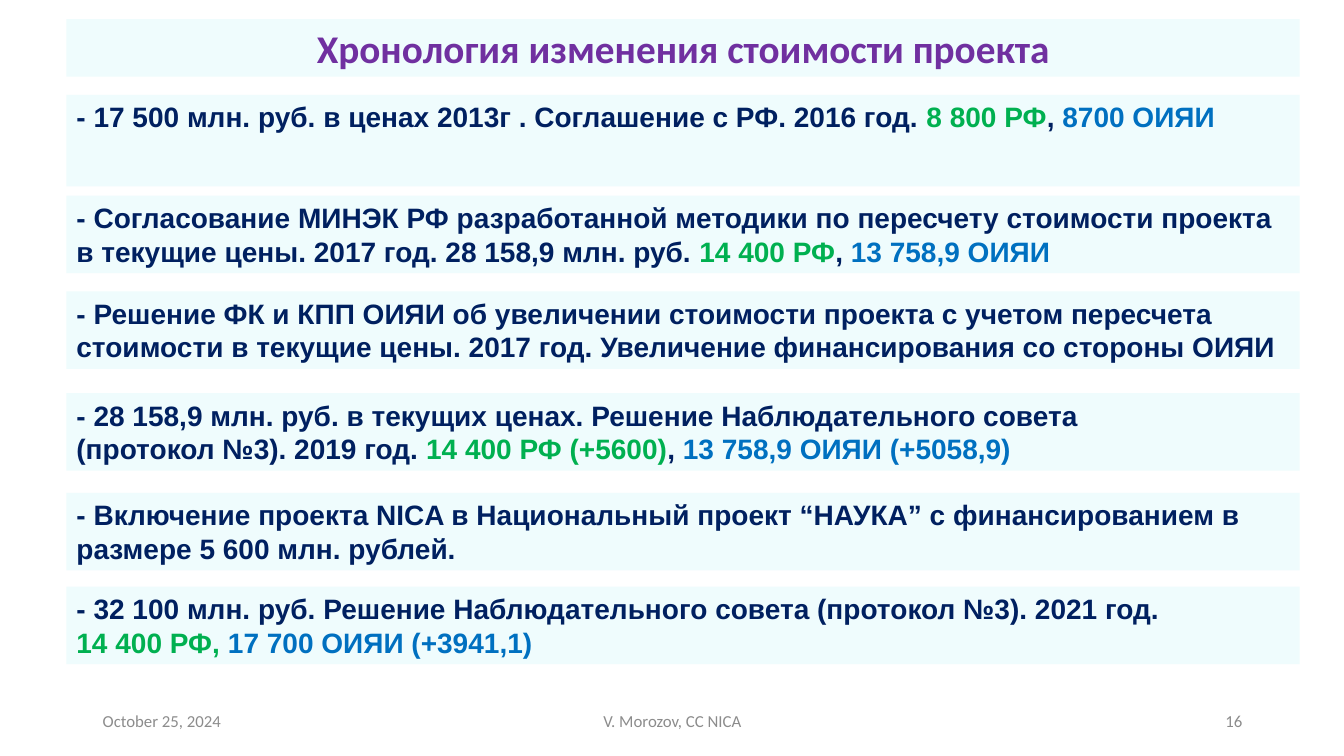
import pptx
import pptx.util
import pptx.dml.color
import pptx.enum.shapes
import pptx.enum.text

Inches = pptx.util.Inches
ALIGN = pptx.enum.text.PP_ALIGN
ANCHOR = pptx.enum.text.MSO_ANCHOR

COLORS = {
    "panel": "EFFCFD",
    "title": "7030A0",
    "text": "002060",
    "russia": "00B050",
    "institute": "0070C0",
    "footer": "8C8C8C",
}

LEFT, WIDTH = 0.66, 12.23

# Top, height and coloured parts of each step
STEPS = [
    (0.94, 0.91, [
        ("- 17 500 млн. руб. в ценах 2013г . Соглашение с РФ. 2016 год. ", "text"),
        ("8 800 РФ", "russia"), (", ", "text"), ("8700 ОИЯИ", "institute")]),
    (1.94, 0.77, [
        ("- Согласование МИНЭК РФ разработанной методики по пересчету стоимости "
         "проекта в текущие цены. 2017 год. 28 158,9 млн. руб. ", "text"),
        ("14 400 РФ", "russia"), (", ", "text"), ("13 758,9 ОИЯИ", "institute")]),
    (2.89, 0.77, [
        ("- Решение ФК и КПП ОИЯИ об увеличении стоимости проекта с учетом "
         "пересчета стоимости в текущие цены. 2017 год. Увеличение "
         "финансирования со стороны ОИЯИ", "text")]),
    (3.9, 0.77, [
        ("- 28 158,9 млн. руб. в текущих ценах. Решение Наблюдательного совета\n"
         "(протокол №3). 2019 год. ", "text"),
        ("14 400 РФ (+5600)", "russia"), (", ", "text"),
        ("13 758,9 ОИЯИ (+5058,9)", "institute")]),
    (4.89, 0.77, [
        ("- Включение проекта NICA в Национальный проект “НАУКА” с "
         "финансированием в размере 5 600 млн. рублей.", "text")]),
    (5.82, 0.77, [
        ("- 32 100 млн. руб. Решение Наблюдательного совета (протокол №3). "
         "2021 год.\n", "text"),
        ("14 400 РФ, ", "russia"), ("17 700 ОИЯИ (+3941,1)", "institute")]),
]


def rgb(name):
    return pptx.dml.color.RGBColor.from_string(COLORS[name])


def add_text(sp, parts, size, font, bold=False, align=ALIGN.LEFT, anchor=ANCHOR.TOP):
    """Write (text, colour) parts as one paragraph; a newline is a line break."""
    tf = sp.text_frame
    tf.word_wrap = True
    tf.vertical_anchor = anchor
    p = tf.paragraphs[0]
    p.alignment = align
    for text, color in parts:
        for i, line in enumerate(text.split("\n")):
            if i:
                p.add_line_break()
            if line:
                r = p.add_run()
                r.text = line
                r.font.size = pptx.util.Pt(size)
                r.font.name = font
                r.font.bold = bold
                r.font.color.rgb = rgb(color)


def add_panel(s, top, height, parts, **text_format):
    sp = s.shapes.add_shape(pptx.enum.shapes.MSO_SHAPE.RECTANGLE, Inches(LEFT),
                            Inches(top), Inches(WIDTH), Inches(height))
    sp.shadow.inherit = False
    sp.fill.solid()
    sp.fill.fore_color.rgb = rgb("panel")
    sp.line.fill.background()
    add_text(sp, parts, **text_format)


def add_footer(s, left, top, width, height):
    side = 3
    middle = 4.5
    fields = [
        (left, side, "October 25, 2024", ALIGN.LEFT),
        (left + (width - middle) / 2, middle, "V. Morozov, CC NICA", ALIGN.CENTER),
        (left + width - side, side, "16", ALIGN.RIGHT),
    ]
    for x, w, text, align in fields:
        sp = s.shapes.add_textbox(Inches(x), Inches(top), Inches(w), Inches(height))
        add_text(sp, [(text, "footer")], size=12, font="Calibri", align=align,
                 anchor=ANCHOR.MIDDLE)


def main():
    prs = pptx.Presentation()
    prs.slide_width, prs.slide_height = Inches(13.33), Inches(7.5)
    s = prs.slides.add_slide(prs.slide_layouts[6])

    # Footer
    add_footer(s, 0.92, 6.95, 11.5, 0.4)

    # Title
    add_panel(s, 0.19, 0.57, [("Хронология изменения стоимости проекта", "title")],
              size=28, font="Calibri", bold=True, align=ALIGN.CENTER)

    # Chronology
    for top, height, parts in STEPS:
        add_panel(s, top, height, parts, size=20, font="Arial", bold=True)

    prs.save("out.pptx")


if __name__ == "__main__":
    main()
